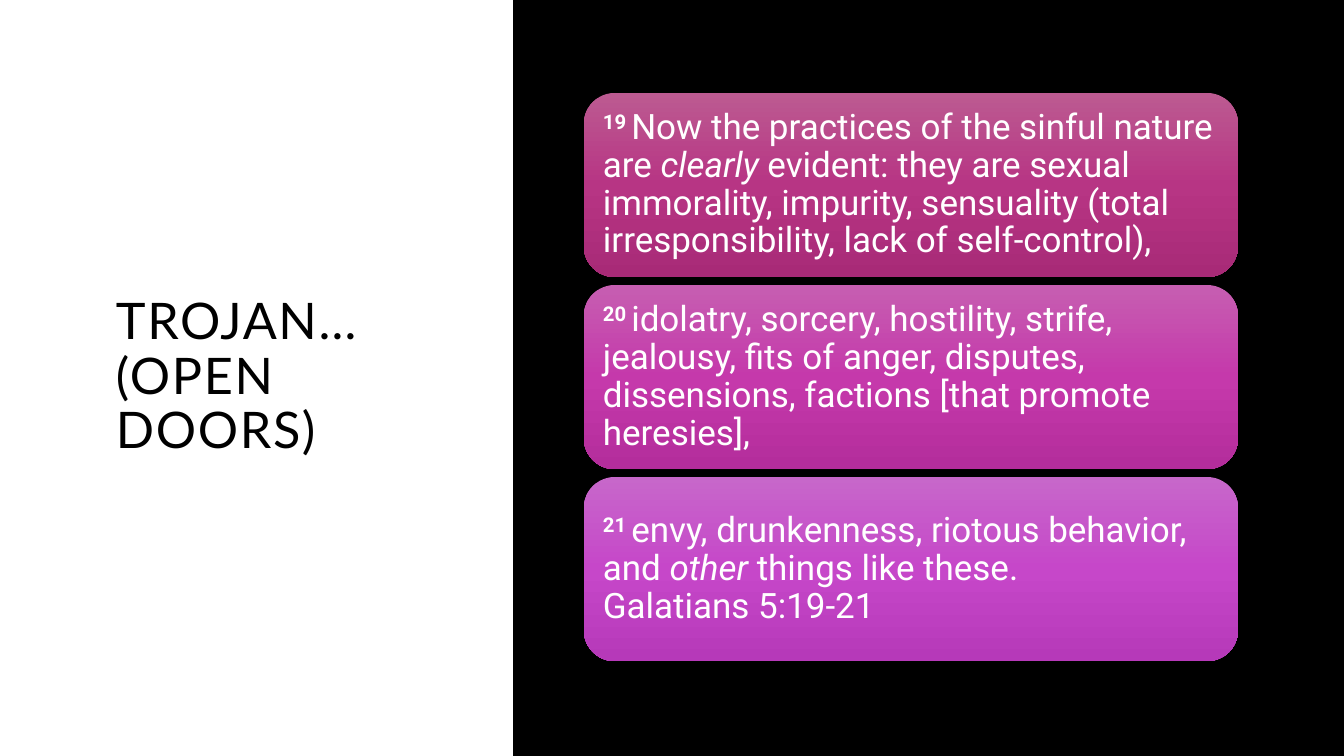
from copy import deepcopy
from dataclasses import dataclass

from pptx import Presentation
from pptx import util as u
from pptx.dml.color import RGBColor
from pptx.enum import shapes, text
from pptx.oxml.ns import qn

WIDTH, HEIGHT = 1344, 756
SCALE = 12192000 / WIDTH


def px(length):
    return u.Emu(round(length * SCALE))


@dataclass(frozen=True)
class Theme:
    black: str = "000000"
    white: str = "FFFFFF"
    title_font: str = "Lato"
    title_size: int = 36
    title_tracking: int = 120
    verse_font: str = "Roboto"
    verse_size: int = 25
    superscript: int = 30000
    line_spacing: float = 0.9
    inset: int = 10
    card_gradients: tuple = (
        ("BC5A91", "B73584", "A82A77"),
        ("C65EB1", "C539AB", "B42D9C"),
        ("C767CA", "C647C9", "B639B9"),
    )


class SlideBuilder:
    def __init__(self, deck, theme):
        self.theme = theme
        self.page = deck.slides.add_slide(deck.slide_layouts[6])

    def background(self, color):
        fill = self.page.background.fill
        fill.solid()
        fill.fore_color.rgb = RGBColor.from_string(color)

    def shape(self, kind, left, top, width, height):
        box = self.page.shapes.add_shape(kind, px(left), px(top), px(width), px(height))
        box.shadow.inherit = False
        box.line.fill.background()
        return box

    def panel(self, left, top, width, height, color):
        box = self.shape(shapes.MSO_SHAPE.RECTANGLE, left, top, width, height)
        box.fill.solid()
        box.fill.fore_color.rgb = RGBColor.from_string(color)

    def gradient(self, box, colors):
        box.fill.gradient()
        box.fill.gradient_angle = 270
        stop_list = box.fill.gradient_stops
        stops = box._element.spPr.find(qn("a:gradFill")).find(qn("a:gsLst"))
        for _ in range(len(colors) - len(stop_list)):
            stops.append(deepcopy(stops[-1]))
        for index, (stop, color) in enumerate(zip(box.fill.gradient_stops, colors)):
            stop.position = index / (len(colors) - 1)
            stop.color.rgb = RGBColor.from_string(color)

    def paragraph(self, box):
        frame = box.text_frame
        frame.word_wrap = True
        frame.vertical_anchor = text.MSO_ANCHOR.MIDDLE
        frame.margin_left = frame.margin_right = px(self.theme.inset)
        frame.margin_top = frame.margin_bottom = px(self.theme.inset)
        para = frame.paragraphs[0]
        para.alignment = text.PP_ALIGN.LEFT
        para.line_spacing = self.theme.line_spacing
        return para

    def style(self, span, font, size, color):
        span.font.name = font
        span.font.size = u.Pt(size)
        span.font.color.rgb = RGBColor.from_string(color)

    def title(self, left, top, width, height, wording):
        box = self.page.shapes.add_textbox(px(left), px(top), px(width), px(height))
        para = self.paragraph(box)
        para.text = wording
        for span in para.runs:
            self.style(span, self.theme.title_font, self.theme.title_size, self.theme.black)
            span.font._element.set("spc", str(self.theme.title_tracking))

    def verse_card(self, left, top, width, height, colors, number, before, emphasis, after):
        box = self.shape(shapes.MSO_SHAPE.ROUNDED_RECTANGLE, left, top, width, height)
        self.gradient(box, colors)
        para = self.paragraph(box)
        para.text = number
        for wording in filter(None, (before, emphasis, after)):
            for index, line in enumerate(wording.split("\n")):
                if index:
                    para.add_line_break()
                span = para.add_run()
                span.text = line
                span.font.italic = wording == emphasis
        for span in para.runs:
            self.style(span, self.theme.verse_font, self.theme.verse_size, self.theme.white)
        marker = para.runs[0].font
        marker.bold = True
        marker._element.set("baseline", str(self.theme.superscript))


VERSES = (
    (
        "19 ",
        "Now the practices of the sinful nature are ",
        "clearly",
        " evident: they are sexual immorality, impurity, sensuality"
        " (total irresponsibility, lack of self-control), ",
    ),
    (
        "20 ",
        "idolatry, sorcery, hostility, strife, jealousy, fits of anger, disputes,"
        " dissensions, factions [that promote heresies], ",
        "",
        "",
    ),
    (
        "21 ",
        "envy, drunkenness, riotous behavior, and ",
        "other",
        " things like these.\nGalatians 5:19-21",
    ),
)


def main():
    deck = Presentation()
    deck.slide_width, deck.slide_height = px(WIDTH), px(HEIGHT)
    theme = Theme()
    slide = SlideBuilder(deck, theme)
    slide.background(theme.black)
    slide.panel(0, 0, 513, HEIGHT, theme.white)
    slide.title(106, 71, 354, 614, "TROJAN…(OPEN DOORS)")
    card_top, card_height, card_gap = 93, 184, 8
    for index, (verse, colors) in enumerate(zip(VERSES, theme.card_gradients)):
        top = card_top + index * (card_height + card_gap)
        slide.verse_card(584, top, 654, card_height, colors, *verse)
    deck.save("out.pptx")


if __name__ == "__main__":
    main()
